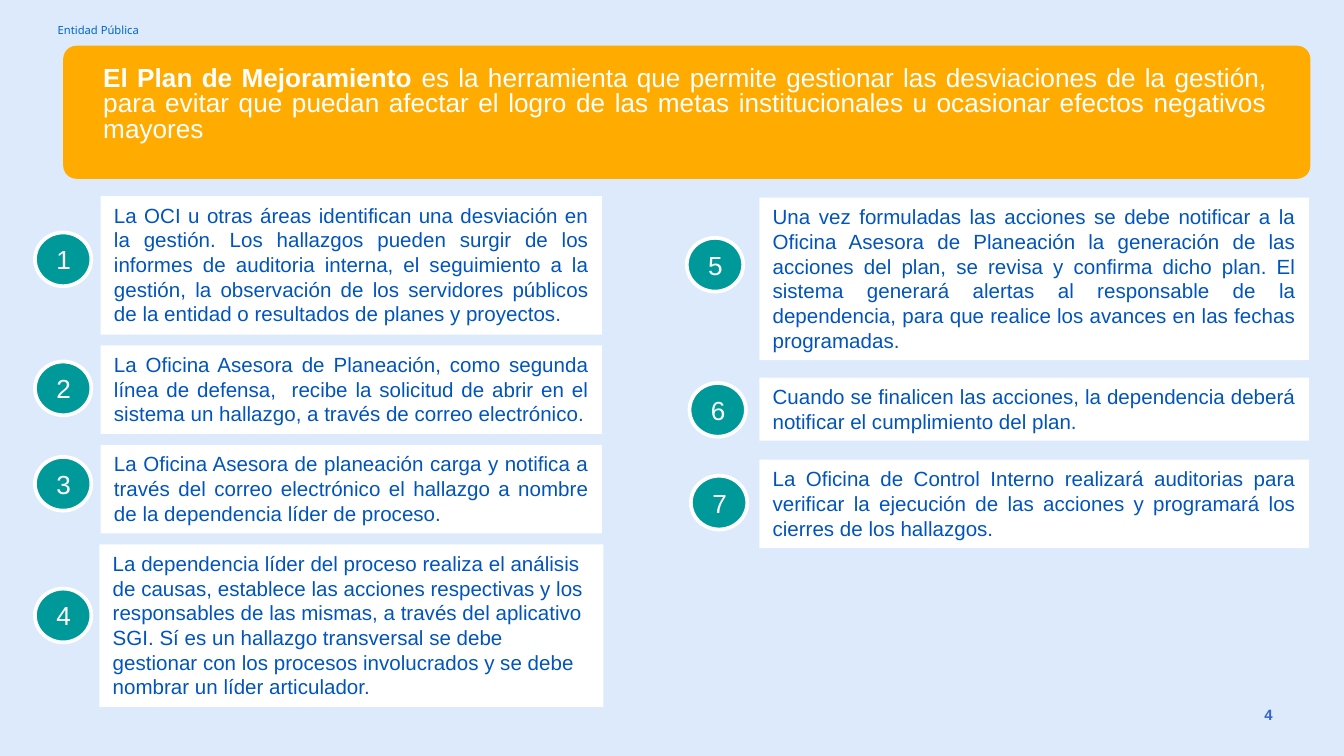
import pptx
import pptx.util
import pptx.dml.color
import pptx.enum.shapes
import pptx.enum.text

SKY = pptx.dml.color.RGBColor(0xDC, 0xEA, 0xFB)
WHITE = pptx.dml.color.RGBColor(0xFF, 0xFF, 0xFF)
AMBER = pptx.dml.color.RGBColor(0xFF, 0xAB, 0x00)
TEAL = pptx.dml.color.RGBColor(0x00, 0x99, 0x99)
STEP_BLUE = pptx.dml.color.RGBColor(0x00, 0x54, 0xBC)
HEADER_BLUE = pptx.dml.color.RGBColor(0x00, 0x66, 0xCD)
PAGE_BLUE = pptx.dml.color.RGBColor(0x33, 0x66, 0xCC)

Shape = pptx.enum.shapes.MSO_SHAPE
Align = pptx.enum.text.PP_ALIGN
Anchor = pptx.enum.text.MSO_ANCHOR

deck = pptx.Presentation()
deck.slide_width = pptx.util.Inches(10)
deck.slide_height = deck.slide_width * 9 // 16
column = deck.slide_width / 100
row = deck.slide_height / 56.25
slide = deck.slides.add_slide(deck.slide_layouts[6])
slide.background.fill.solid()
slide.background.fill.fore_color.rgb = SKY


def add_block(left, top, width, height, preset=None, fill=None):
    box = [round(left * column), round(top * row), round(width * column), round(height * row)]
    if preset is None:
        return slide.shapes.add_textbox(*box)
    block = slide.shapes.add_shape(preset, *box)
    block.shadow.inherit = False
    block.fill.solid()
    block.fill.fore_color.rgb = fill
    block.line.fill.background()
    return block


def write(block, wording, size, color, align, anchor=Anchor.TOP, font="Arial"):
    frame = block.text_frame
    frame.word_wrap = True
    frame.vertical_anchor = anchor
    paragraph = frame.paragraphs[0]
    paragraph.alignment = align
    for part in wording:
        run = paragraph.add_run()
        run.text = part
        run.font.size = pptx.util.Pt(size)
        run.font.name = font
        run.font.color.rgb = color
    return paragraph


header = add_block(3.6, 1.2, 20.3, 2)
write(header, ["Entidad Pública"], 6, HEADER_BLUE, Align.LEFT, Anchor.MIDDLE, "Noto Sans")
header.text_frame.margin_left = header.text_frame.margin_right = round(0.7 * column)
header.text_frame.margin_top = header.text_frame.margin_bottom = round(0.4 * row)

banner = add_block(4.7, 3.4, 92.8, 9.9, Shape.ROUNDED_RECTANGLE, AMBER)
banner.adjustments[0] = 0.1
definition = write(
    add_block(6.7, 4.55, 88.6, 9.9),
    [
        "El Plan de Mejoramiento ",
        "es la herramienta que permite gestionar las desviaciones de la gestión, para evitar que "
        "puedan afectar el logro de las metas institucionales u ocasionar efectos negativos mayores",
    ],
    14, WHITE, Align.JUSTIFY,
)
definition.line_spacing = 0.8
definition.runs[0].font.bold = True

steps = [
    (7.5, 14.6, 37.3, 10.3, 2.6, 17.3, Align.JUSTIFY,
     "La OCI u otras áreas identifican una desviación en la gestión. Los hallazgos pueden surgir de los "
     "informes de auditoria interna, el seguimiento a la gestión, la observación de los servidores "
     "públicos de la entidad o resultados de planes y proyectos."),
    (7.5, 25.7, 37.3, 6.6, 2.6, 26.9, Align.JUSTIFY,
     "La Oficina Asesora de Planeación, como segunda línea de defensa,  recibe la solicitud de abrir "
     "en el sistema un hallazgo, a través de correo electrónico."),
    (7.5, 33.1, 37.3, 6.6, 2.6, 34, Align.JUSTIFY,
     "La Oficina Asesora de planeación carga y notifica a través del correo electrónico el hallazgo a "
     "nombre de la dependencia líder de proceso."),
    (7.4, 40.5, 37.5, 12.1, 2.6, 43.8, Align.LEFT,
     "La dependencia líder del proceso realiza el análisis de causas, establece las acciones "
     "respectivas y los responsables de las mismas, a través del aplicativo SGI. Sí es un hallazgo "
     "transversal se debe gestionar con los procesos involucrados y se debe nombrar un líder articulador."),
    (56.5, 14.7, 40.9, 12.1, 51.1, 17.7, Align.JUSTIFY,
     "Una vez formuladas las acciones se debe notificar a la Oficina Asesora de Planeación la "
     "generación de las acciones del plan, se revisa y confirma dicho plan. El sistema generará alertas "
     "al responsable de la dependencia, para que realice los avances en las fechas programadas."),
    (56.5, 28.1, 40.9, 4.7, 51.3, 28.5, Align.JUSTIFY,
     "Cuando se finalicen las acciones, la dependencia deberá notificar el cumplimiento del plan."),
    (56.5, 34.2, 40.9, 6.6, 51.4, 35.4, Align.JUSTIFY,
     "La Oficina de Control Interno realizará auditorias para verificar la ejecución de las acciones "
     "y programará los cierres de los hallazgos."),
]
for number, (left, top, width, height, badge_left, badge_top, align, wording) in enumerate(steps, 1):
    step = add_block(left, top, width, height, Shape.RECTANGLE, WHITE)
    write(step, [wording], 11, STEP_BLUE, align)
    badge = add_block(badge_left, badge_top, 4.2, 4, Shape.OVAL, TEAL)
    badge.line.color.rgb = WHITE
    badge.line.width = pptx.util.Pt(2)
    write(badge, [str(number)], 14, WHITE, Align.CENTER, Anchor.MIDDLE)

page_number = write(add_block(93.1, 52, 3.3, 2.4), ["4"], 8, PAGE_BLUE, Align.JUSTIFY)
page_number.runs[0].font.bold = True

deck.save("out.pptx")
